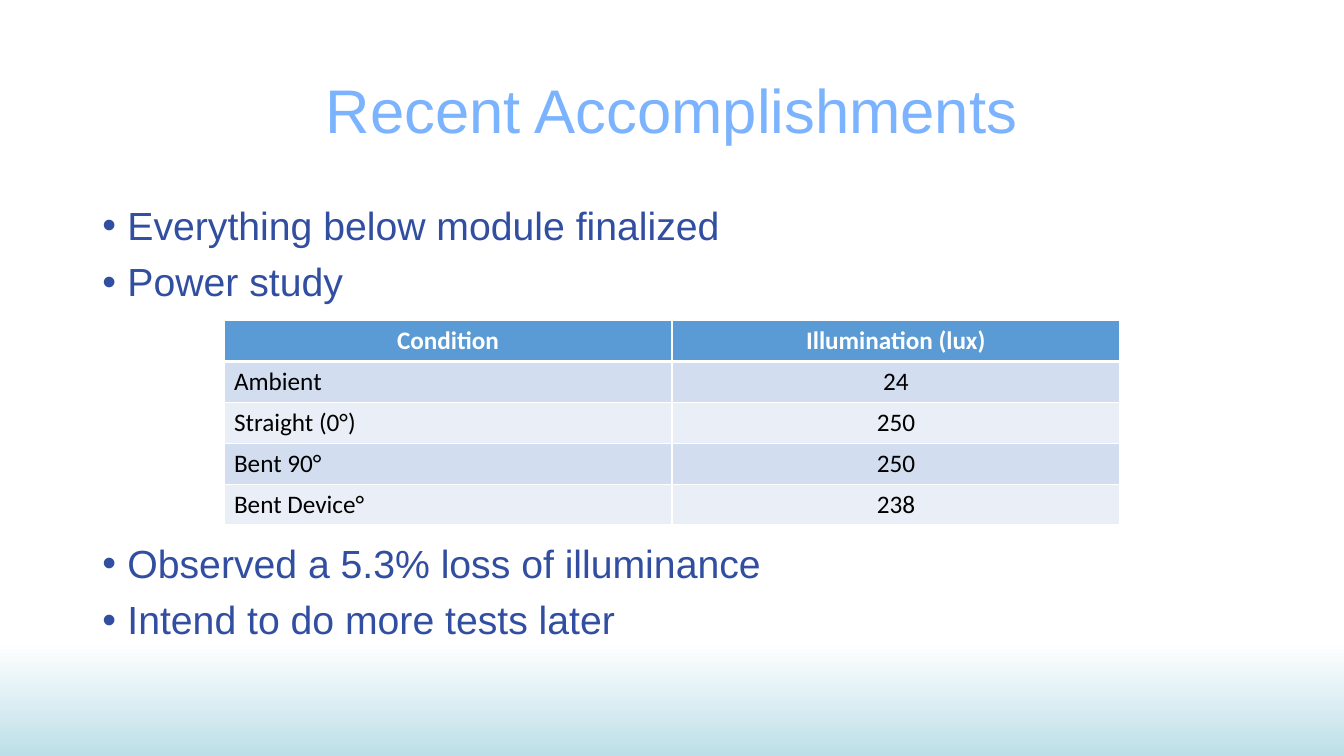
from dataclasses import dataclass

from lxml.etree import SubElement
from pptx import Presentation
from pptx.dml.color import RGBColor
from pptx.enum.text import MSO_ANCHOR, PP_ALIGN
from pptx.oxml.ns import qn
from pptx.util import Pt


@dataclass(frozen=True)
class Theme:
    heading_font: str = "Arial"
    table_font: str = "Calibri"
    title_size: int = 44
    bullet_size: int = 28
    table_size: int = 18
    title: str = "7CB3FE"
    bullet: str = "314EA1"
    white: str = "FFFFFF"
    black: str = "000000"
    header: str = "5B9BD5"
    bands: tuple = ("D2DEEF", "EAEFF7")
    glow: str = "BDDFE8"


THEME = Theme()
TITLE = "Recent Accomplishments"
FINDINGS = ["Everything below module finalized", "Power study"]
CONCLUSIONS = ["Observed a 5.3% loss of illuminance", "Intend to do more tests later"]
MEASUREMENTS = [
    ("Condition", "Illumination (lux)"),
    ("Ambient", "24"),
    ("Straight (0°)", "250"),
    ("Bent 90°", "250"),
    ("Bent Device°", "238"),
]


def set_attributes(target, values):
    for name, value in values.items():
        setattr(target, name, value)


def format_font(font, name, size, color, bold=False):
    set_attributes(font, {"name": name, "size": Pt(size), "bold": bold})
    font.color.rgb = RGBColor.from_string(color)


def paint_background(slide):
    fill = slide.background.fill
    fill.gradient()
    fill.gradient_angle = 270
    stops = [(0.85, THEME.white), (1, THEME.glow)]
    for stop, (position, color) in zip(fill.gradient_stops, stops):
        stop.position = position
        stop.color.rgb = RGBColor.from_string(color)


def add_title(slide, left, top, width, height):
    title = slide.shapes.title
    set_attributes(title, {"left": Pt(left), "top": Pt(top),
                           "width": Pt(width), "height": Pt(height)})
    title.text_frame.text = TITLE
    title.text_frame.vertical_anchor = MSO_ANCHOR.MIDDLE
    paragraph = title.text_frame.paragraphs[0]
    set_attributes(paragraph, {"alignment": PP_ALIGN.CENTER, "line_spacing": 0.9})
    format_font(paragraph.runs[0].font, THEME.heading_font, THEME.title_size, THEME.title)


def add_bullets(slide, items, left, top, width, height):
    shape = slide.shapes.add_textbox(Pt(left), Pt(top), Pt(width), Pt(height))
    frame = shape.text_frame
    frame.word_wrap = True
    frame.text = "\n".join(items)
    for paragraph in frame.paragraphs:
        set_attributes(paragraph, {"line_spacing": 0.9, "space_before": Pt(10)})
        format_font(paragraph.runs[0].font, THEME.heading_font, THEME.bullet_size, THEME.bullet)
        properties = paragraph._p.get_or_add_pPr()
        properties.set("marL", str(Pt(18)))
        properties.set("indent", str(Pt(-18)))
        SubElement(properties, qn("a:buFont"), typeface=THEME.heading_font)
        SubElement(properties, qn("a:buChar"), char="•")


def set_borders(cell, widths):
    """Draw white edges; widths maps an edge tag to points, in schema order."""
    properties = cell._tc.get_or_add_tcPr()
    for index, (edge, width) in enumerate(widths.items()):
        line = SubElement(properties, qn(f"a:{edge}"), w=str(Pt(width)))
        fill = SubElement(line, qn("a:solidFill"))
        SubElement(fill, qn("a:srgbClr"), val=THEME.white)
        properties.insert(index, line)


def add_measurements(slide, left, top, width, height):
    table = slide.shapes.add_table(len(MEASUREMENTS), len(MEASUREMENTS[0]),
                                   Pt(left), Pt(top), Pt(width), Pt(height)).table
    for row_index, values in enumerate(MEASUREMENTS):
        is_header = row_index == 0
        background = THEME.header if is_header else THEME.bands[(row_index - 1) % 2]
        color = THEME.white if is_header else THEME.black
        for column_index, value in enumerate(values):
            cell = table.cell(row_index, column_index)
            cell.text = value
            cell.fill.solid()
            cell.fill.fore_color.rgb = RGBColor.from_string(background)
            paragraph = cell.text_frame.paragraphs[0]
            centred = is_header or column_index > 0
            paragraph.alignment = PP_ALIGN.CENTER if centred else PP_ALIGN.LEFT
            format_font(paragraph.runs[0].font, THEME.table_font, THEME.table_size,
                        color, is_header)
            set_borders(cell, {"lnL": 1, "lnR": 1, "lnT": 3 if row_index == 1 else 1,
                               "lnB": 3 if is_header else 1})


def build_accomplishments(presentation):
    title_only = presentation.slide_layouts[5]
    slide = presentation.slides.add_slide(title_only)
    left, width = 66, 828
    paint_background(slide)
    add_title(slide, left, 28.75, width, 104.5)
    add_bullets(slide, FINDINGS, left, 144, width, 84)
    add_bullets(slide, CONCLUSIONS, left, 385.4, width, 84)
    add_measurements(slide, 160, 229, 640, 146)


def main():
    presentation = Presentation()
    set_attributes(presentation, {"slide_width": Pt(960), "slide_height": Pt(540)})
    build_accomplishments(presentation)
    presentation.save("out.pptx")


if __name__ == "__main__":
    main()
